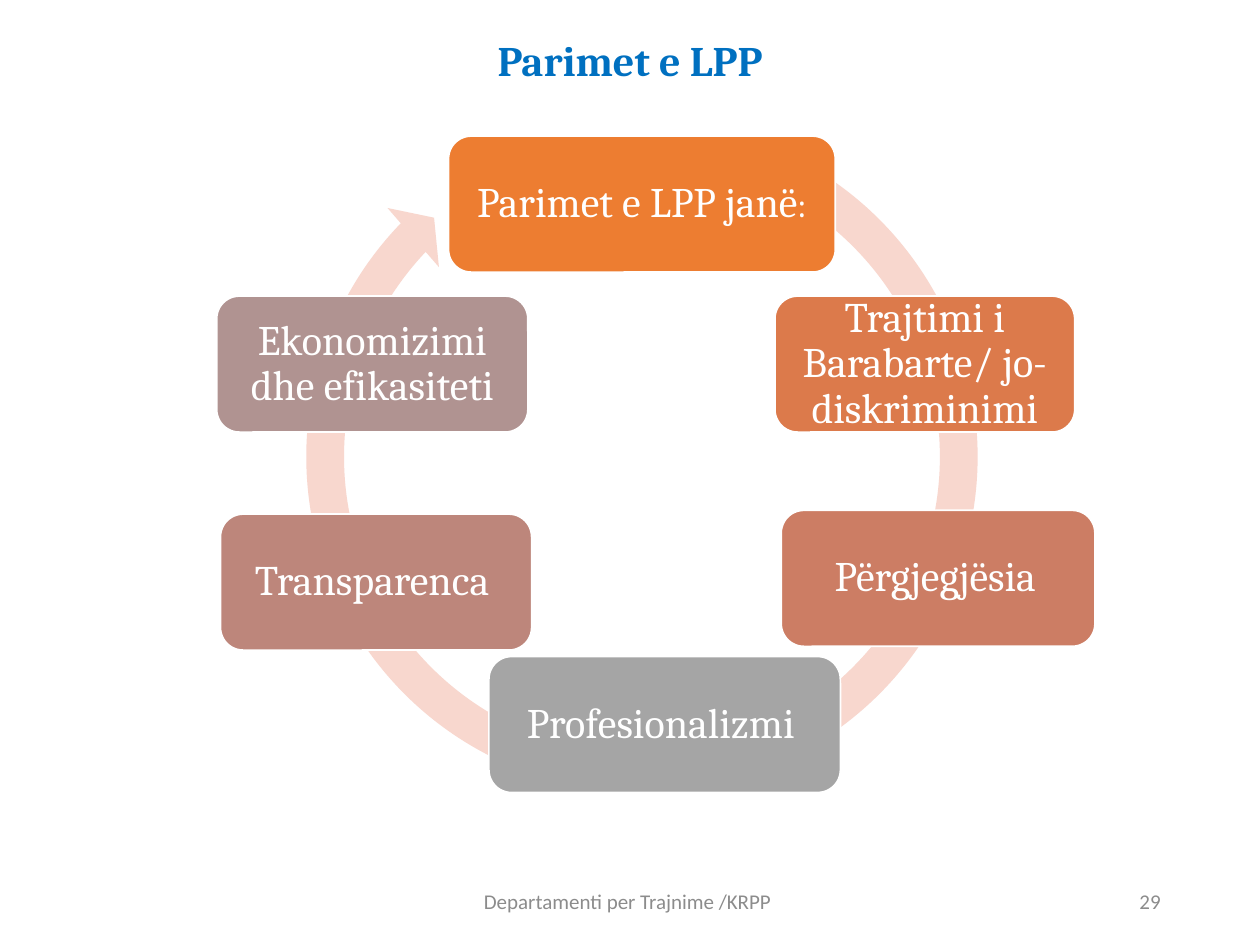
from pptx import Presentation
from pptx.dml.color import RGBColor
from pptx.enum.shapes import MSO_SHAPE
from pptx.enum.text import MSO_ANCHOR, PP_ALIGN
from pptx.util import Inches, Pt

prs = Presentation()
prs.slide_width, prs.slide_height = Inches(10), Inches(7.5)
s = prs.slides.add_slide(prs.slide_layouts[5])
rgb = RGBColor.from_string


def share(x, y, w, h):
    """Turn percentages of the slide's width and height into a position and size."""
    W, H = prs.slide_width, prs.slide_height
    return [round(v * side / 100) for v, side in ((x, W), (y, H), (w, W), (h, H))]


def write(sp, *runs, size=24, font="Cambria", color="FFFFFF", bold=False,
          align=PP_ALIGN.CENTER, spacing=0.9, inset=0.1):
    """Fill a shape with one paragraph; a run is a text or a (text, size) pair."""
    tf = sp.text_frame
    tf.word_wrap = True
    tf.vertical_anchor = MSO_ANCHOR.MIDDLE
    tf.margin_left = tf.margin_right = Inches(inset)
    tf.margin_top = tf.margin_bottom = Inches(inset)
    p = tf.paragraphs[0]
    p.alignment, p.line_spacing = align, spacing
    for run in runs:
        text, run_size = (run, size) if isinstance(run, str) else run
        r = p.add_run()
        r.text = text
        r.font.name, r.font.size, r.font.bold = font, Pt(run_size), bold
        r.font.color.rgb = rgb(color)


title = s.shapes.title
title.left, title.top, title.width, title.height = share(0, 0, 100, 13.33)
write(title, "Parimet e LPP", color="0070C0", bold=True, inset=0.05)

# Footer and slide number
for x, w, text, align in [
    (70.6, 22.5, "29", PP_ALIGN.RIGHT),
    (33.1, 33.8, "Departamenti per Trajnime /KRPP ", PP_ALIGN.CENTER),
]:
    box = s.shapes.add_textbox(*share(x, 92.67, w, 5.33))
    write(box, text, size=12, font="Calibri", color="8C8C8C", align=align, spacing=1)

# Ring behind the principles
ring = s.shapes.add_shape(MSO_SHAPE.CIRCULAR_ARROW, *share(22.7, 10.67, 56.5, 75.33))
ring.shadow.inherit = False
ring.fill.solid()
ring.fill.fore_color.rgb = rgb("F8D7CE")
ring.line.fill.background()
# Angles are in units of 100000/60000 degree
for i, value in enumerate((0.053, 3.126, 134.265, 176.139, 0.055)):
    ring.adjustments[i] = value

# Left, top and width in percent of the slide, fill, text runs
principles = [
    (35.6, 14.4, 30.7, "ED7D31", ["Parimet e LPP janë", (":", 20)]),
    (61.5, 31.33, 23.8, "DC7A4B", ["Trajtimi i Barabarte/ jo-diskriminimi"]),
    (62, 54, 24.9, "CC7D64", ["Përgjegjësia", (" ", 15)]),
    (17.5, 54.4, 24.7, "BD867B", ["Transparenca", (" ", 20)]),
    (17.2, 31.33, 24.7, "B09391", ["Ekonomizimi dhe efikasiteti"]),
    (38.8, 69.47, 27.9, "A5A5A5", ["Profesionalizmi", (" ", 20)]),
]
for x, y, w, fill, runs in principles:
    sp = s.shapes.add_shape(MSO_SHAPE.ROUNDED_RECTANGLE, *share(x, y, w, 14.4))
    sp.shadow.inherit = False
    sp.fill.solid()
    sp.fill.fore_color.rgb = rgb(fill)
    sp.line.color.rgb = rgb("FFFFFF")
    sp.line.width = Pt(1)
    write(sp, *runs)

prs.save("out.pptx")
